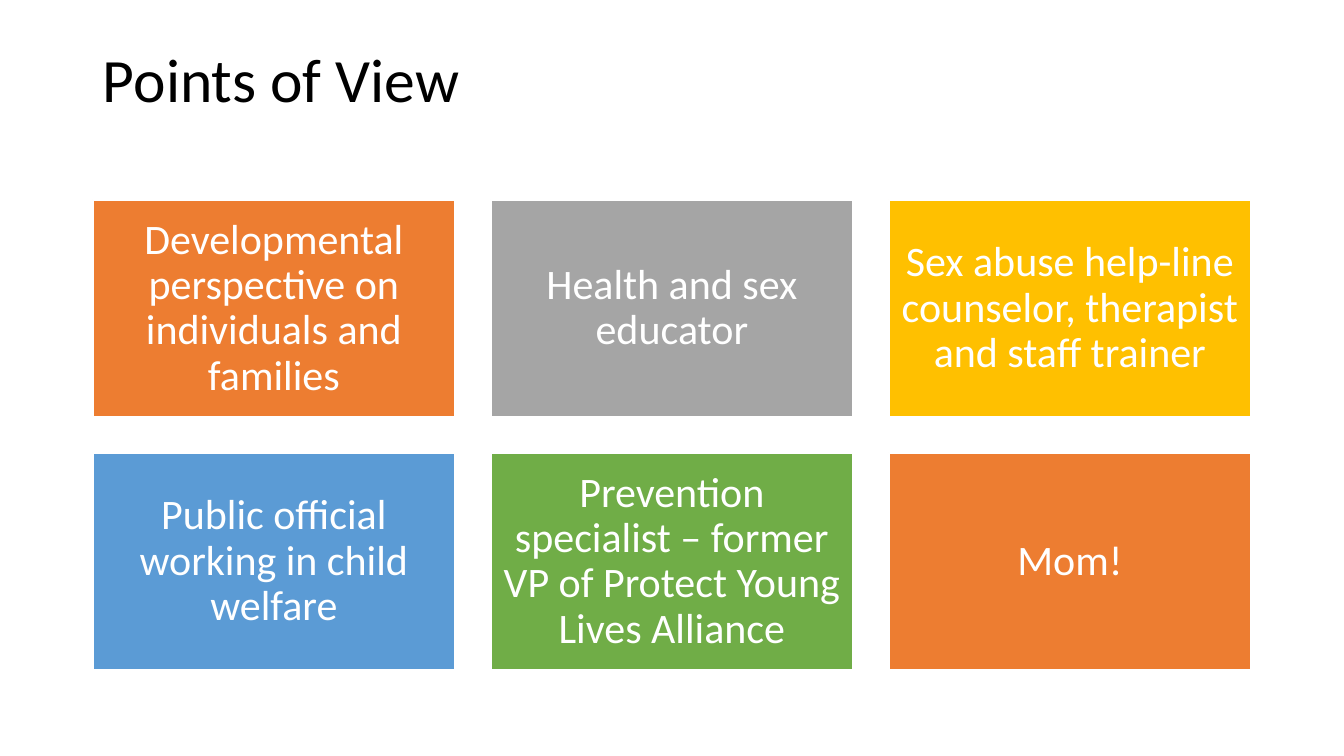
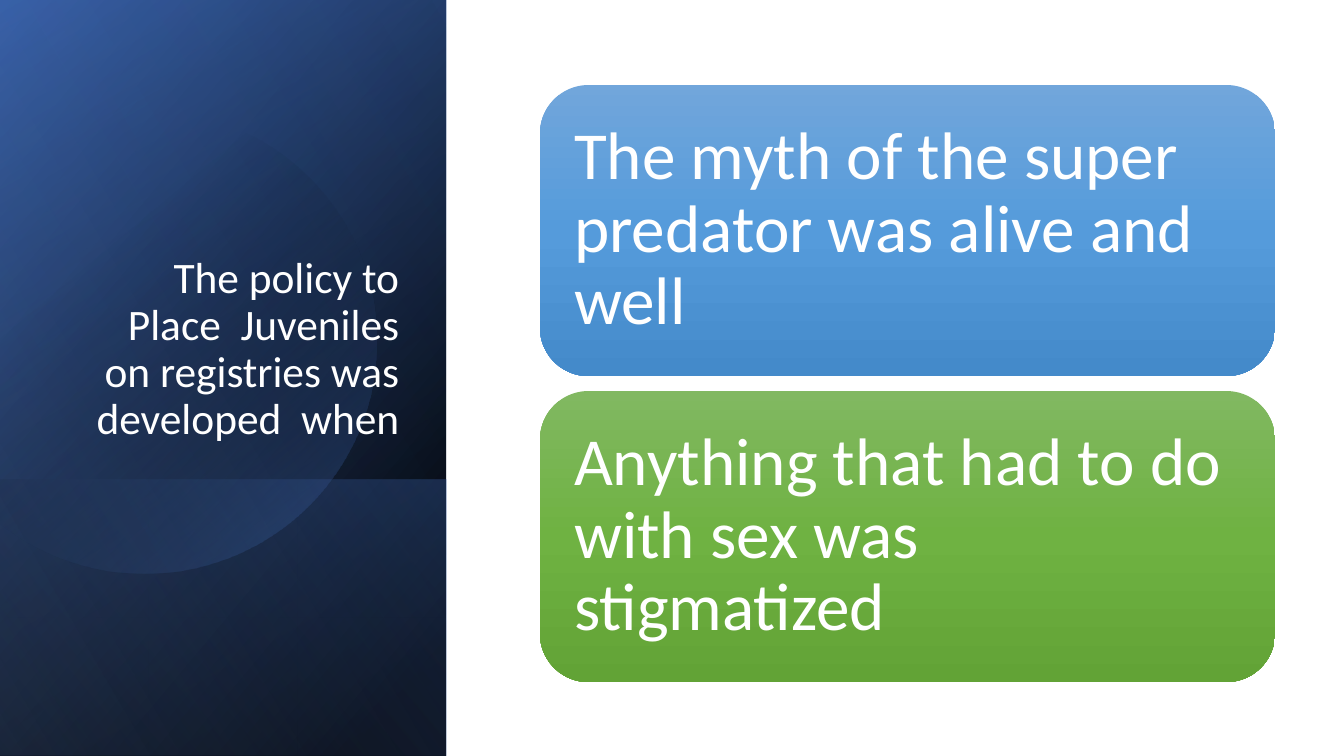
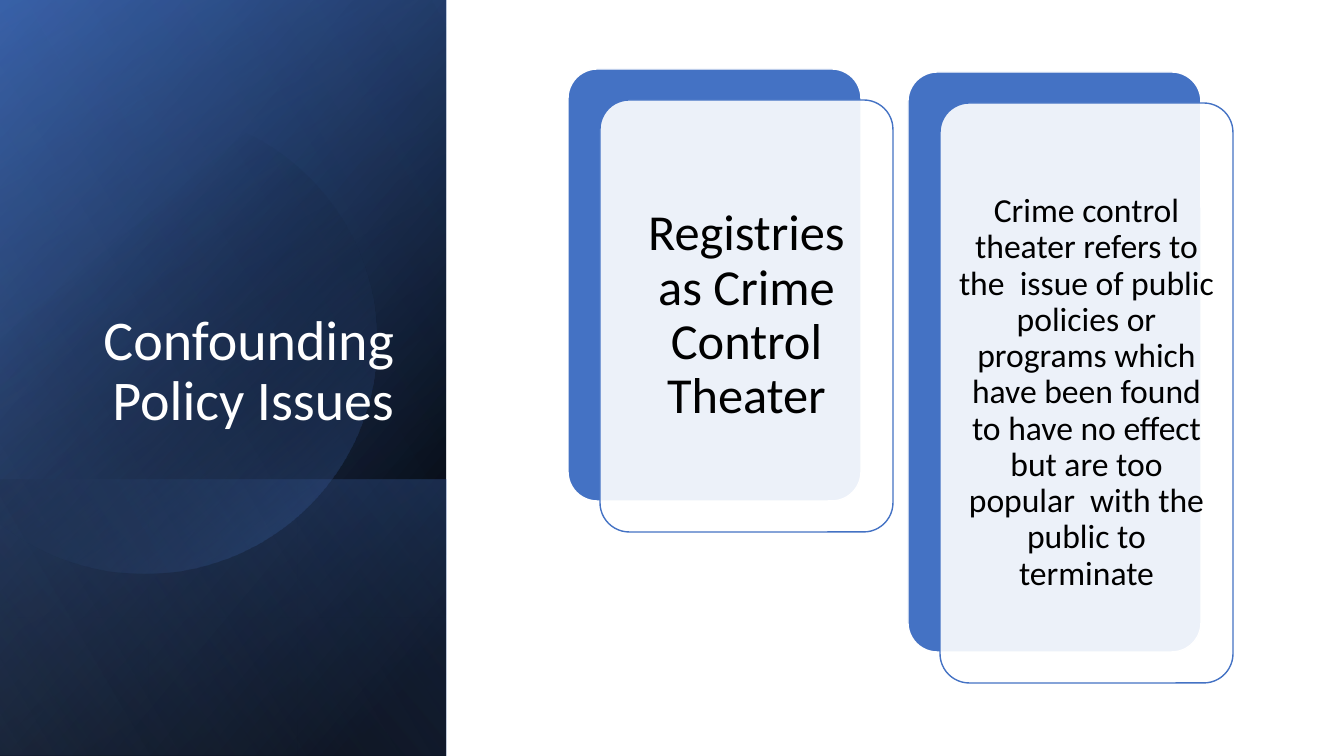
from math import acos, cos, sin

from lxml.etree import SubElement
from pptx import Presentation
from pptx.dml.color import RGBColor
from pptx.enum.shapes import MSO_SHAPE
from pptx.enum.text import MSO_ANCHOR, PP_ALIGN
from pptx.oxml.ns import qn
from pptx.util import Pt

WIDE, HIGH = 1344, 756
WHITE, BLACK, BLUE = "FFFFFF", "000000", "4472C4"
ORANGE, GRAY, GOLD, SKY, GREEN = "ED7D31", "A5A5A5", "FFC000", "5B9BD5", "70AD47"
LEFT, MID, RIGHT = PP_ALIGN.LEFT, PP_ALIGN.CENTER, PP_ALIGN.RIGHT
RECT, ROUND = MSO_SHAPE.RECTANGLE, MSO_SHAPE.ROUNDED_RECTANGLE


def px(num):
    return round(num * 12192000 / WIDE)


def tint(code):
    return RGBColor.from_string(code)


def write(shape, text, size=30, color=WHITE, align=LEFT,
          anchor=MSO_ANCHOR.MIDDLE, pad=(10, 5)):
    frame = shape.text_frame
    frame.word_wrap = True
    frame.vertical_anchor = anchor
    frame.margin_left = frame.margin_right = px(pad[0])
    frame.margin_top = frame.margin_bottom = px(pad[1])
    para = frame.paragraphs[0]
    para.alignment = align
    para.line_spacing = 0.9
    run = para.add_run()
    run.text = text
    run.font.name = "Calibri"
    run.font.size = Pt(size)
    run.font.color.rgb = tint(color)


class Deck:
    def __init__(self):
        self.show = Presentation()
        self.show.slide_width = px(WIDE)
        self.show.slide_height = px(HIGH)

    def page(self):
        layout = self.show.slide_layouts[6]
        self.slide = self.show.slides.add_slide(layout)

    def title(self, text, x, y, w, h, **form):
        box = self.slide.shapes.add_textbox(px(x), px(y), px(w), px(h))
        write(box, text, **form)

    def block(self, x, y, w, h, kind=RECT, fill=None, line=None, alpha=100, curve=None):
        shape = self.slide.shapes.add_shape(kind, px(x), px(y), px(w), px(h))
        shape.shadow.inherit = False
        if curve:
            shape.adjustments[0] = curve
        if fill:
            shape.fill.solid()
            shape.fill.fore_color.rgb = tint(fill)
            if alpha < 100:
                color = shape.element.spPr.find(qn("a:solidFill"))[0]
                SubElement(color, qn("a:alpha"), val=str(alpha * 1000))
        if line:
            shape.line.color.rgb = tint(line)
            shape.line.width = Pt(1)
        else:
            shape.line.fill.background()
        return shape

    def blend(self, shape, angle, *stops):
        shape.fill.gradient()
        shape.fill.gradient_angle = 360 - angle
        items = shape.element.spPr.find(qn("a:gradFill")).find(qn("a:gsLst"))
        for old in list(items):
            items.remove(old)
        for place, code, alpha in stops:
            stop = SubElement(items, qn("a:gs"), pos=str(place * 1000))
            color = SubElement(stop, qn("a:srgbClr"), val=code)
            if alpha < 100:
                SubElement(color, qn("a:alpha"), val=str(alpha * 1000))

    def disc(self, x, y, r):
        edge = acos(-x / r)
        turns = [edge * (step / 60 - 1) for step in range(121)]
        dots = [(px(x + r * cos(turn)), px(y + r * sin(turn))) for turn in turns]
        form = self.slide.shapes.build_freeform(*dots[0], scale=1)
        form.add_line_segments(dots[1:], close=True)
        shape = form.convert_to_shape()
        shape.shadow.inherit = False
        shape.line.fill.background()
        return shape

    def side(self):
        wide, base = 446, 480
        full = (0, 0, wide, HIGH)
        self.blend(self.block(*full), 220, (8, BLACK, 100), (100, "2F5597", 100))
        self.blend(self.block(*full), 240, (0, BLACK, 0), (99, BLUE, 46))
        self.blend(self.block(0, base, wide, HIGH - base), 140,
                   (2, BLUE, 29), (100, BLACK, 30))
        self.blend(self.disc(144, 342, 232), 50, (29, BLACK, 0), (100, BLUE, 43))
        self.blend(self.block(*full), 150, (0, BLACK, 0), (99, "8FAADC", 11))

    def card(self, text, x, y, h, size, pad):
        wide, curve = 293, 0.1
        self.block(x, y, wide, h, ROUND, BLUE, WHITE, curve=curve)
        front = self.block(x + 32, y + 31, wide, h, ROUND, WHITE, BLUE, 90, curve)
        write(front, text, size=size, color=BLACK, align=MID, pad=(pad, pad))


def views(deck):
    deck.page()
    deck.title("Points of View", 93, 27, 1158, 111, size=44, color=BLACK)
    tiles = [
        ("Developmental perspective on individuals and families", ORANGE),
        ("Health and sex educator", GRAY),
        ("Sex abuse help-line counselor, therapist and staff trainer", GOLD),
        ("Public official working in child welfare", SKY),
        ("Prevention specialist – former VP of Protect Young Lives Alliance", GREEN),
        ("Mom!", ORANGE),
    ]
    wide, high, gap = 362, 217, 36
    for num, (text, fill) in enumerate(tiles):
        row, col = divmod(num, 3)
        tile = deck.block(93 + col * (wide + gap), 200 + row * (high + gap),
                          wide, high, fill=fill, line=WHITE)
        write(tile, text, align=MID, pad=(12, 12))


def myths(deck):
    deck.page()
    deck.side()
    deck.title("The policy to Place  Juveniles on registries was developed  when",
               65, 185, 344, 264, size=31, align=RIGHT, anchor=MSO_ANCHOR.BOTTOM)
    bars = [
        ("The myth of the super predator was alive and well",
         ("71A6DB", "559BDB", "448ACA")),
        ("Anything that had to do with sex was stigmatized",
         ("81B861", "6FB242", "62A336")),
    ]
    high, gap = 291, 15
    for row, (text, codes) in enumerate(bars):
        bar = deck.block(540, 85 + row * (high + gap), 735, high, ROUND)
        deck.blend(bar, 90, *[(n * 50, code, 100) for n, code in enumerate(codes)])
        write(bar, text, size=48, pad=(20, 20))


def issues(deck):
    deck.page()
    deck.side()
    deck.title("Confounding Policy Issues", 51, 65, 353, 373,
               size=40, align=RIGHT, anchor=MSO_ANCHOR.BOTTOM)
    deck.card("Registries as Crime Control Theater", 568, 69, 432, 36, 15)
    deck.card("Crime control theater refers to the  issue of public policies or "
              "programs which have been found to have no effect but are too "
              "popular  with the public to terminate", 908, 72, 580, 24, 10)


def main():
    deck = Deck()
    for build in (views, myths, issues):
        build(deck)
    deck.show.save("out.pptx")


if __name__ == "__main__":
    main()
